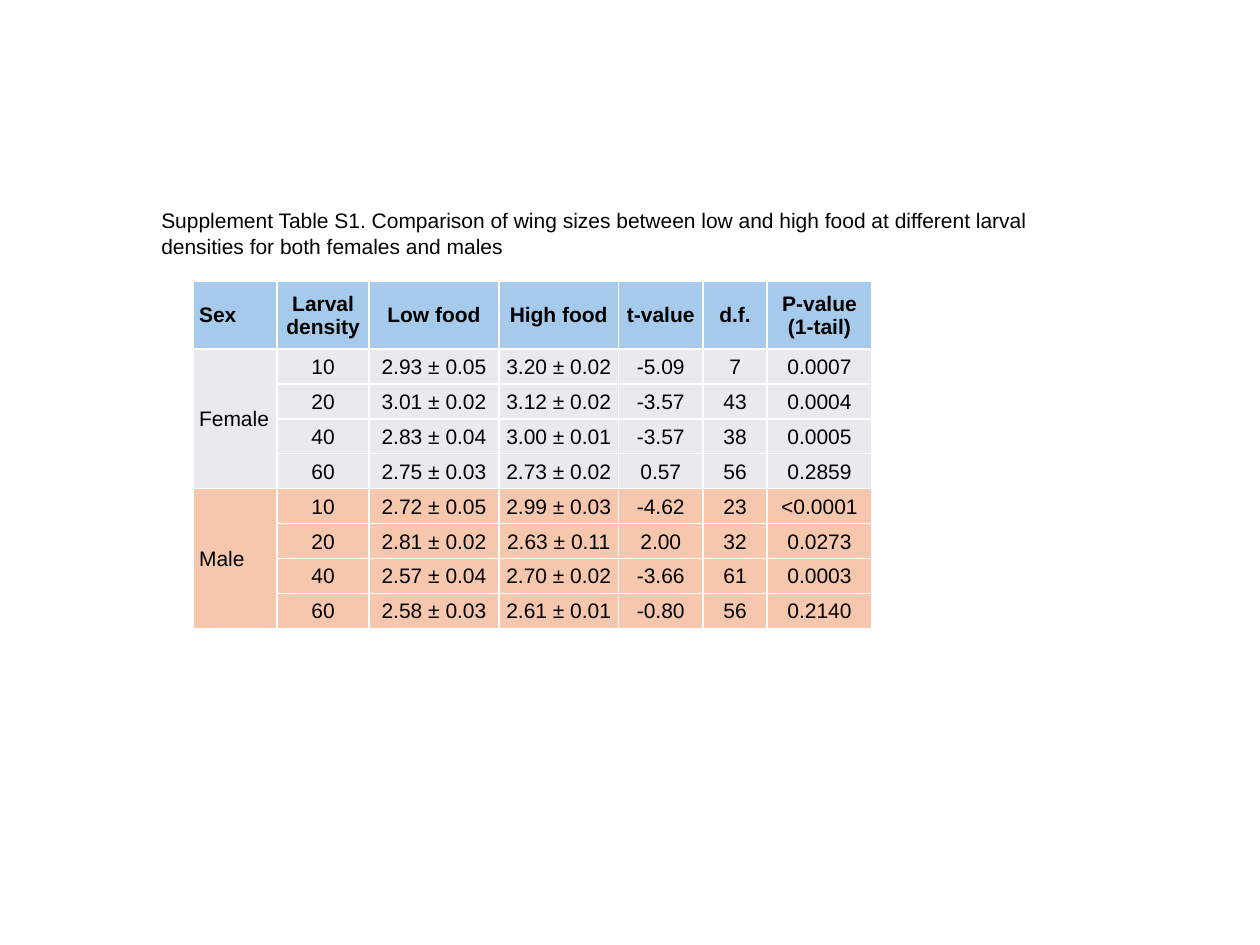
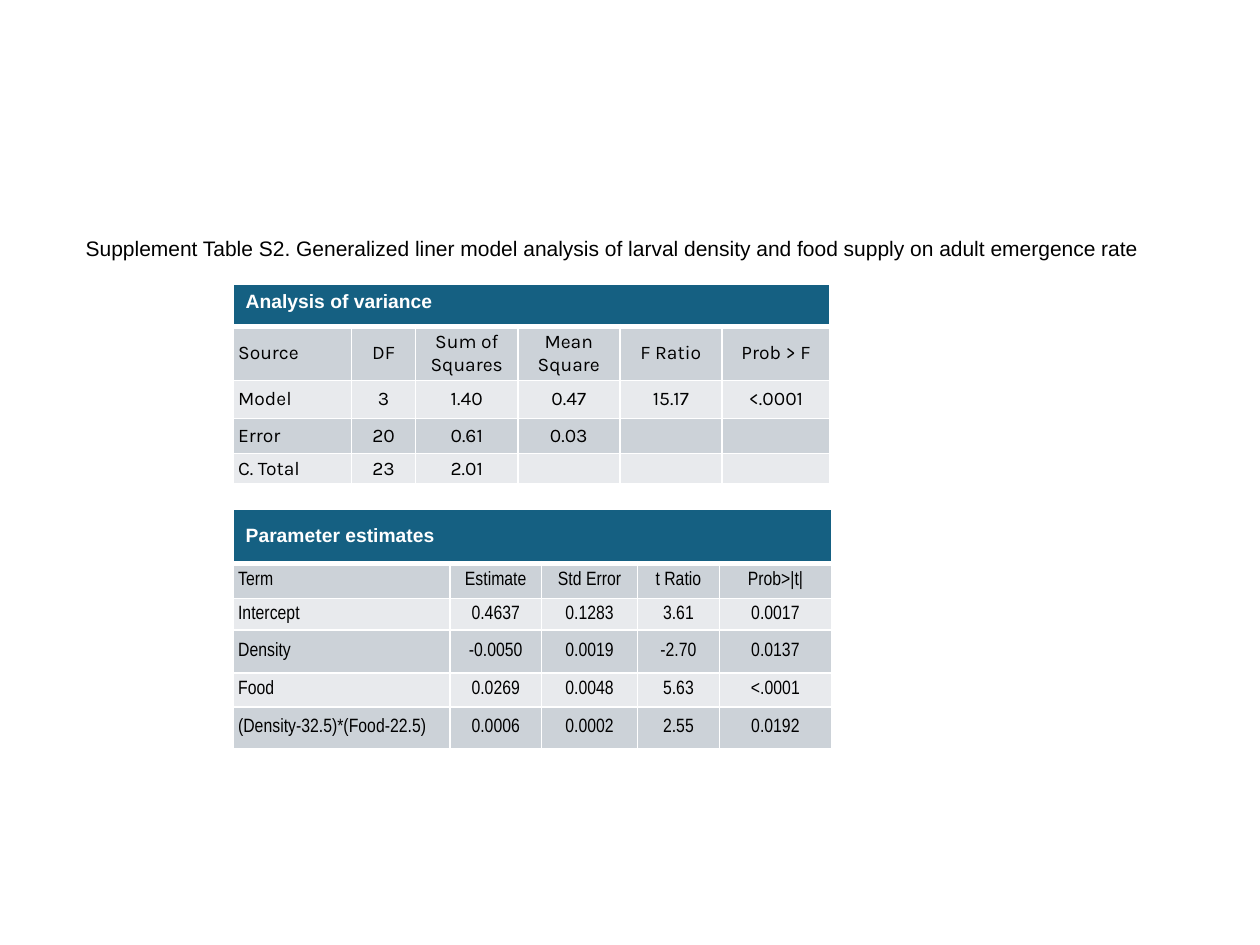
from pptx import Presentation
from pptx.dml.color import RGBColor
from pptx.enum.text import MSO_ANCHOR, MSO_AUTO_SIZE, PP_ALIGN
from pptx.oxml.ns import qn
from pptx.util import Inches, Pt
from lxml.etree import SubElement

BLACK = RGBColor(0x00, 0x00, 0x00)
WHITE = RGBColor(0xFF, 0xFF, 0xFF)
SKY = RGBColor(0xA6, 0xCA, 0xEC)
PEACH = RGBColor(0xF6, 0xC6, 0xAD)
TEAL = RGBColor(0x15, 0x60, 0x82)
GREY = RGBColor(0xCC, 0xD2, 0xD8)
PALE = RGBColor(0xE8, 0xEA, 0xED)
FONT = "Arial"

# Slide 1: wing sizes
WING_CAPTION = ("Supplement Table S1. Comparison of wing sizes between low and high food "
                "at different larval densities for both females and males")
WING_HEAD = ["Sex", "Larval density", "Low food", "High food", "t-value", "d.f.", "P-value (1-tail)"]
WING_COLS = [0.67, 0.73, 1.03, 0.95, 0.67, 0.51, 0.83]
WING_HEIGHT, WING_HEAD_HEIGHT = 2.76, 0.54
WING_GROUPS = [
    ("Female", PALE, [
        ["10", "2.93 ± 0.05", "3.20 ± 0.02", "-5.09", "7", "0.0007"],
        ["20", "3.01 ± 0.02", "3.12 ± 0.02", "-3.57", "43", "0.0004"],
        ["40", "2.83 ± 0.04", "3.00 ± 0.01", "-3.57", "38", "0.0005"],
        ["60", "2.75 ± 0.03", "2.73 ± 0.02", "0.57", "56", "0.2859"],
    ]),
    ("Male", PEACH, [
        ["10", "2.72 ± 0.05", "2.99 ± 0.03", "-4.62", "23", "<0.0001"],
        ["20", "2.81 ± 0.02", "2.63 ± 0.11", "2.00", "32", "0.0273"],
        ["40", "2.57 ± 0.04", "2.70 ± 0.02", "-3.66", "61", "0.0003"],
        ["60", "2.58 ± 0.03", "2.61 ± 0.01", "-0.80", "56", "0.2140"],
    ]),
]

# Slide 2: model analysis
MODEL_CAPTION = ("Supplement Table S2. Generalized liner model analysis of larval density "
                 "and food supply on adult emergence rate")
MODEL_TABLES = [
    dict(title="Analysis of variance", top=2.26, font="Karla", anchor=MSO_ANCHOR.TOP,
         cols=[0.94, 0.51, 0.81, 0.81, 0.81, 0.86],
         heights=[0.33, 0.43, 0.3, 0.28, 0.24],
         rows=[["Source", "DF", "Sum of Squares", "Mean Square", "F Ratio", "Prob > F"],
               ["Model", "3", "1.40", "0.47", "15.17", "<.0001"],
               ["Error", "20", "0.61", "0.03", "", ""],
               ["C. Total", "23", "2.01", "", "", ""]]),
    dict(title="Parameter estimates", top=4.04, font="Arial Narrow", anchor=MSO_ANCHOR.MIDDLE,
         cols=[1.72, 0.73, 0.76, 0.65, 0.89],
         heights=[0.43, 0.28, 0.25, 0.34, 0.27, 0.33],
         rows=[["Term", "Estimate", "Std Error", "t Ratio", "Prob>|t|"],
               ["Intercept", "0.4637", "0.1283", "3.61", "0.0017"],
               ["Density", "-0.0050", "0.0019", "-2.70", "0.0137"],
               ["Food", "0.0269", "0.0048", "5.63", "<.0001"],
               ["(Density-32.5)*(Food-22.5)", "0.0006", "0.0002", "2.55", "0.0192"]]),
]


def style_paragraph(p, size, font=FONT, color=BLACK, bold=False, align=PP_ALIGN.LEFT):
    p.alignment = align
    for r in p.runs:
        r.font.name, r.font.size, r.font.bold = font, Pt(size), bold
        r.font.color.rgb = color
    if not p.runs:  # keeps an empty cell from stretching its row
        p._p.get_or_add_endParaRPr().set("sz", str(size * 100))


def add_captioned_slide(prs, caption, left, top, width, height):
    slide = prs.slides.add_slide(prs.slide_layouts[5])
    title = slide.shapes.title
    title.left, title.top, title.width, title.height = map(Inches, (left, top, width, height))
    tf = title.text_frame
    tf.text = caption
    tf.word_wrap = True
    tf.auto_size = MSO_AUTO_SIZE.NONE
    tf.vertical_anchor = MSO_ANCHOR.TOP
    style_paragraph(tf.paragraphs[0], 12)
    return slide


def add_plain_table(slide, left, top, cols, heights):
    table = slide.shapes.add_table(len(heights), len(cols), Inches(left), Inches(top),
                                   Inches(sum(cols)), Inches(sum(heights))).table
    table.first_row = table.horz_banding = False
    for column, width in zip(table.columns, cols):
        column.width = Inches(width)
    for row, height in zip(table.rows, heights):
        row.height = Inches(height)
    return table


def set_borders(cell, top=1, bottom=1):
    tcPr = cell._tc.get_or_add_tcPr()
    for side, width in (("L", 1), ("R", 1), ("T", top), ("B", bottom)):
        ln = SubElement(tcPr, qn(f"a:ln{side}"), w=str(Pt(width)))
        SubElement(SubElement(ln, qn("a:solidFill")), qn("a:srgbClr"), val=str(WHITE))


def fill_cell(cell, color, top=1, bottom=1):
    set_borders(cell, top, bottom)
    cell.fill.solid()
    cell.fill.fore_color.rgb = color


def write_row(table, row, texts, fill, size, font=FONT, bold=False, inset=0.0, top=1):
    """Write one row: first column left, the others centred."""
    for col, text in enumerate(texts):
        cell = table.cell(row, col)
        fill_cell(cell, fill, top)
        cell.margin_top = cell.margin_right = Inches(inset)
        cell.margin_bottom = 0
        cell.margin_left = Inches(inset if col else inset + 0.04)
        cell.vertical_anchor = MSO_ANCHOR.MIDDLE
        cell.text_frame.text = text
        style_paragraph(cell.text_frame.paragraphs[0], size, font, bold=bold,
                        align=PP_ALIGN.CENTER if col else PP_ALIGN.LEFT)


def build_wing_slide(prs):
    slide = add_captioned_slide(prs, WING_CAPTION, 1.18, 1.6, 7.37, 0.5)
    count = sum(len(rows) for _, _, rows in WING_GROUPS)
    row_height = (WING_HEIGHT - WING_HEAD_HEIGHT) / count
    table = add_plain_table(slide, 1.53, 2.23, WING_COLS,
                            [WING_HEAD_HEIGHT] + [row_height] * count)
    write_row(table, 0, WING_HEAD, SKY, 12, bold=True, inset=0.01)
    first = 1
    for sex, fill, rows in WING_GROUPS:
        for i, values in enumerate(rows):
            write_row(table, first + i, ["" if i else sex] + values, fill, 12, inset=0.01)
        last = first + len(rows) - 1
        table.cell(first, 0).merge(table.cell(last, 0))
        first = last + 1


def build_model_slide(prs):
    slide = add_captioned_slide(prs, MODEL_CAPTION, 0.58, 1.82, 8.85, 0.3)
    for t in MODEL_TABLES:
        table = add_plain_table(slide, 1.85, t["top"], t["cols"], t["heights"])
        # Heading band across all columns
        for cell in table.rows[0].cells:
            fill_cell(cell, TEAL, bottom=3)
        band = table.cell(0, 0)
        band.merge(table.cell(0, len(t["cols"]) - 1))
        band.vertical_anchor = t["anchor"]
        band.text_frame.text = t["title"]
        style_paragraph(band.text_frame.paragraphs[0], 11, color=WHITE, bold=True)
        # Alternating rows
        for i, texts in enumerate(t["rows"]):
            write_row(table, i + 1, texts, PALE if i % 2 else GREY, 11, t["font"],
                      top=1 if i else 3)


def main():
    prs = Presentation()
    prs.slide_width, prs.slide_height = Inches(10), Inches(7.5)
    build_wing_slide(prs)
    build_model_slide(prs)
    prs.save("out.pptx")


if __name__ == "__main__":
    main()
